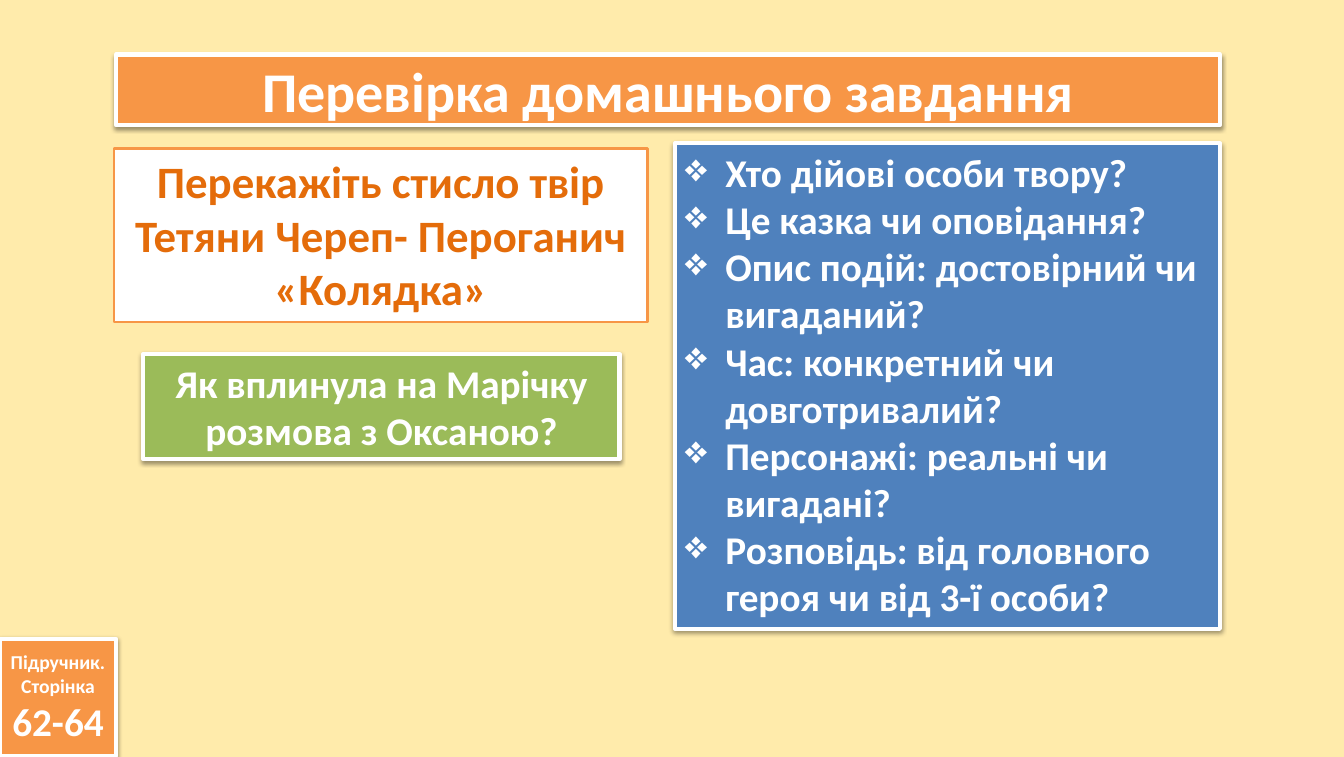
from lxml import etree
from pptx import Presentation
from pptx.dml.color import RGBColor
from pptx.enum.shapes import MSO_SHAPE
from pptx.enum.text import MSO_ANCHOR, MSO_AUTO_SIZE, PP_ALIGN
from pptx.oxml import parse_xml
from pptx.oxml.ns import nsdecls, qn
from pptx.util import Emu, Pt

PX = 9144  # 100 px to the inch
SLIDE_SIZE = (1332, 750)
BACKGROUND = "FFEBAB"
WHITE, ORANGE, DARK_ORANGE = "FFFFFF", "F79646", "E46C0A"
BLUE, GREEN = "4F81BD", "9BBB59"
FONT = "Calibri"
BULLET, BULLET_INDENT = "❖", 40

# Each panel: box in px, fill, text colour, (line, size) pairs
TITLE = {
    "box": (115, 54, 1094, 70), "fill": ORANGE, "color": WHITE,
    "lines": [("Перевірка домашнього завдання", 40)],
    "anchor": MSO_ANCHOR.MIDDLE,
}
TEXTBOOK_PAGES = {
    "box": (0, 633, 115, 116), "fill": ORANGE, "color": WHITE,
    "lines": [("Підручник.", 14), ("Сторінка", 14), ("62-64", 28)],
    "anchor": MSO_ANCHOR.MIDDLE,
}
RETELLING = {
    "box": (113, 147, 529, 172), "fill": WHITE, "color": DARK_ORANGE,
    "lines": [("Перекажіть стисло твір Тетяни Череп- Пероганич «Колядка»", 32)],
    "border": (ORANGE, 2), "shadow": False,
}
QUESTIONS = {
    "box": (669, 142, 540, 481), "fill": BLUE, "color": WHITE,
    "lines": [(question, 28) for question in (
        "Хто дійові особи твору?",
        "Це казка чи оповідання?",
        "Опис подій: достовірний чи вигаданий?",
        "Час: конкретний чи довготривалий?",
        "Персонажі: реальні чи вигадані?",
        "Розповідь: від головного героя чи від 3-ї особи?",
    )],
    "bulleted": True,
}
INFLUENCE = {
    "box": (142, 351, 472, 104), "fill": GREEN, "color": WHITE,
    "lines": [("Як вплинула на Марічку розмова з Оксаною?", 28)],
}


def px(length):
    return Emu(length * PX)


def rgb(hex_color):
    return RGBColor.from_string(hex_color)


def add_soft_shadow(shape):
    effects = shape._element.spPr.find(qn("a:effectLst"))
    effects.append(parse_xml(
        f'<a:outerShdw {nsdecls("a")} blurRad="{Pt(3.1)}" dist="{Pt(1.6)}" '
        'dir="5400000" rotWithShape="0"><a:srgbClr val="000000">'
        '<a:alpha val="38000"/></a:srgbClr></a:outerShdw>'))


def add_bullet(paragraph):
    properties = paragraph._p.get_or_add_pPr()
    properties.set("marL", str(px(BULLET_INDENT)))
    properties.set("indent", str(-px(BULLET_INDENT)))
    etree.SubElement(properties, qn("a:buChar"), char=BULLET)


def format_panel(shape, box, fill, color, lines, border=(WHITE, 3),
                 shadow=True, bulleted=False, anchor=MSO_ANCHOR.TOP):
    shape.left, shape.top, shape.width, shape.height = map(px, box)
    shape.fill.solid()
    shape.fill.fore_color.rgb = rgb(fill)
    border_color, border_width = border
    shape.line.color.rgb = rgb(border_color)
    shape.line.width = Pt(border_width)
    shape.shadow.inherit = False
    if shadow:
        add_soft_shadow(shape)

    frame = shape.text_frame
    frame.text = "\n".join(text for text, _ in lines)
    frame.word_wrap = True
    frame.auto_size = MSO_AUTO_SIZE.NONE
    frame.vertical_anchor = anchor
    for paragraph, (_, size) in zip(frame.paragraphs, lines):
        paragraph.alignment = PP_ALIGN.LEFT if bulleted else PP_ALIGN.CENTER
        if bulleted:
            add_bullet(paragraph)
        for run in paragraph.runs:
            run.font.name = FONT
            run.font.size = Pt(size)
            run.font.bold = True
            run.font.color.rgb = rgb(color)


def main():
    deck = Presentation()
    deck.slide_width, deck.slide_height = map(px, SLIDE_SIZE)
    slide = deck.slides.add_slide(deck.slide_layouts[5])
    slide.background.fill.solid()
    slide.background.fill.fore_color.rgb = rgb(BACKGROUND)

    format_panel(slide.shapes.title, **TITLE)
    for panel in (TEXTBOOK_PAGES, RETELLING, QUESTIONS, INFLUENCE):
        shape = slide.shapes.add_shape(MSO_SHAPE.RECTANGLE, *map(px, panel["box"]))
        format_panel(shape, **panel)
    deck.save("out.pptx")


if __name__ == "__main__":
    main()
